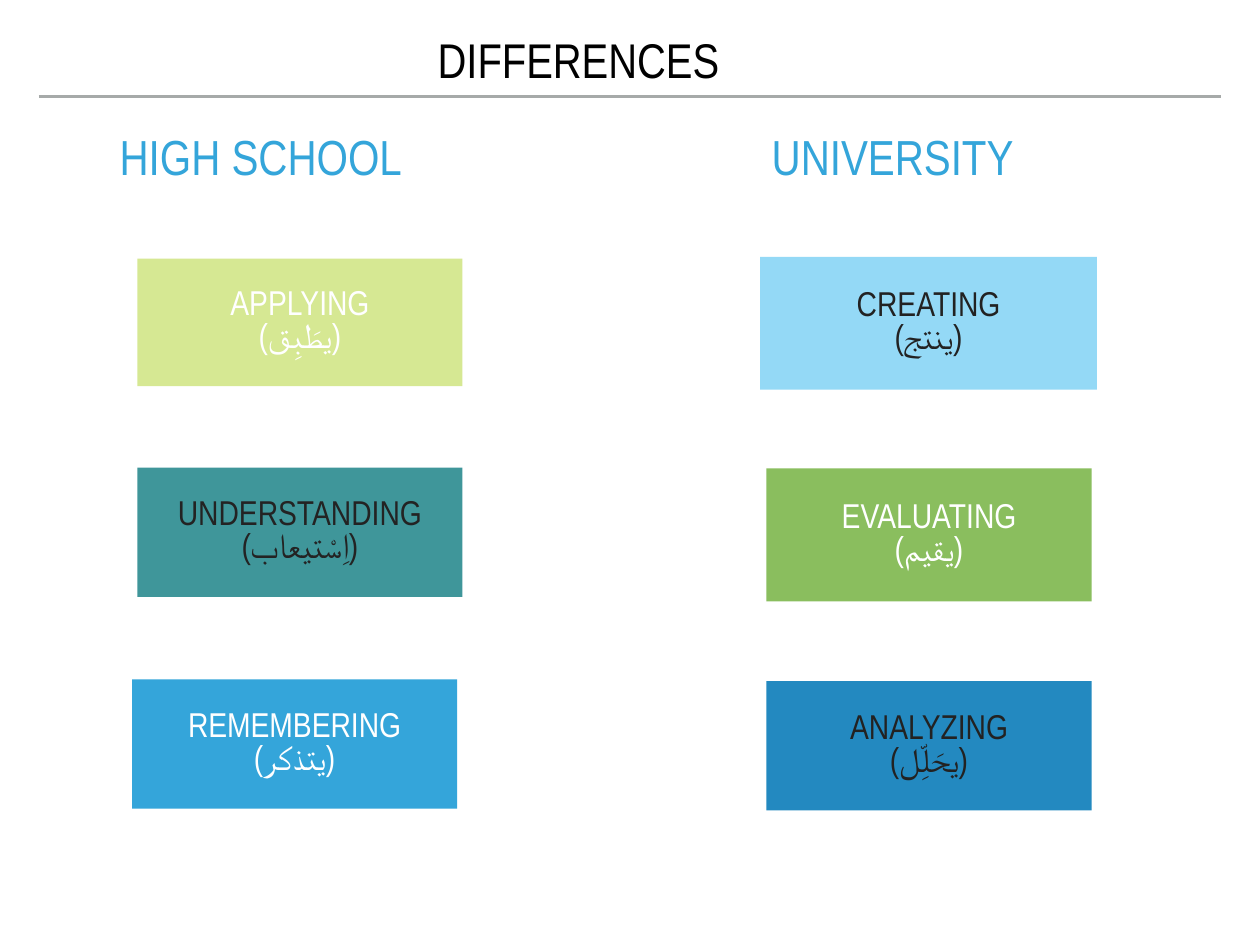
"""Build the slide comparing high school and university thinking skills."""
from dataclasses import dataclass

from lxml import etree
from pptx import Presentation
from pptx.dml.color import RGBColor
from pptx.enum.shapes import MSO_CONNECTOR, MSO_SHAPE
from pptx.enum.text import MSO_ANCHOR, PP_ALIGN
from pptx.oxml.ns import qn
from pptx.util import Pt

PX = 9144
FONT = "Arial Narrow"
INSET = 6
STRAIGHT = MSO_CONNECTOR.STRAIGHT
RECTANGLE = MSO_SHAPE.RECTANGLE
TOP, MIDDLE = MSO_ANCHOR.TOP, MSO_ANCHOR.MIDDLE
LEFT, CENTER = PP_ALIGN.LEFT, PP_ALIGN.CENTER


@dataclass(frozen=True)
class Box:
    left: int
    top: int
    width: int
    height: int


@dataclass(frozen=True)
class Heading:
    box: Box
    text: str
    color: str
    size: float = 40
    spacing: float = 0.8


@dataclass(frozen=True)
class Skill:
    box: Box
    english: str
    arabic: str
    fill: str
    color: str


HEADINGS = [
    Heading(Box(865, 149, 373, 116), "UNIVERSITY", "34A5DA"),
    Heading(Box(129, 149, 413, 116), "HIGH SCHOOL", "34A5DA"),
    Heading(Box(488, 51, 446, 99), "DIFFERENCES", "000000", 39.6, 0.6),
]
SKILLS = [
    Skill(Box(149, 767, 367, 146), "REMEMBERING", "(يتذكر)", "34A5DA", "FFFFFF"),
    Skill(Box(155, 528, 367, 146), "UNDERSTANDING", "(اِسْتيعاب)", "3F969A", "232323"),
    Skill(Box(155, 292, 367, 144), "APPLYING", "(يطَبِق)", "D6E893", "FFFFFF"),
    Skill(Box(865, 769, 367, 146), "ANALYZING", "(يحَلِّل)", "2389C0", "222222"),
    Skill(Box(865, 529, 367, 150), "EVALUATING", "(يقيم)", "8ABE5E", "FFFFFF"),
    Skill(Box(858, 290, 380, 150), "CREATING", "(ينتج)", "94D9F6", "222222"),
]


def rgb(color: str) -> RGBColor:
    """Turn a hex string into a colour."""
    return RGBColor.from_string(color)


def emu(box: Box) -> list[int]:
    """Scale a box from px to EMU."""
    return [v * PX for v in (box.left, box.top, box.width, box.height)]


def write(sp, lines: list[str], size: float, color: str, spacing: float,
          align=LEFT, anchor=TOP) -> None:
    """Fill a shape with evenly formatted paragraphs."""
    tf = sp.text_frame
    frame = {"word_wrap": True, "vertical_anchor": anchor}
    frame |= {f"margin_{side}": INSET * PX for side in ("left", "top", "right", "bottom")}
    for name, value in frame.items():
        setattr(tf, name, value)
    for i, line in enumerate(lines):
        p = tf.paragraphs[0] if i == 0 else tf.add_paragraph()
        p.alignment, p.line_spacing = align, spacing
        r = p.add_run()
        r.text = line
        for name, value in {"name": FONT, "size": Pt(size)}.items():
            setattr(r.font, name, value)
        r.font.color.rgb = rgb(color)


def add_rule(s, left: int, right: int, y: int) -> None:
    """Draw the grey line below the title."""
    sp = s.shapes.add_connector(STRAIGHT, left * PX, y * PX, right * PX, y * PX)
    sp.line.color.rgb = rgb("A6AAA9")
    sp.line.width = Pt(2)
    etree.SubElement(sp._element.spPr, qn("a:effectLst"))


def add_heading(s, heading: Heading) -> None:
    """Draw one heading."""
    sp = s.shapes.add_textbox(*emu(heading.box))
    write(sp, [heading.text], heading.size, heading.color, heading.spacing)


def add_skill(s, skill: Skill) -> None:
    """Draw one filled skill box with its translation."""
    sp = s.shapes.add_shape(RECTANGLE, *emu(skill.box))
    sp.shadow.inherit = False
    sp.fill.solid()
    sp.fill.fore_color.rgb = rgb(skill.fill)
    sp.line.fill.background()
    write(sp, [skill.english, skill.arabic], 28, skill.color, 0.8, CENTER, MIDDLE)


def main() -> None:
    """Build and save the slide."""
    prs = Presentation()
    prs.slide_width, prs.slide_height = 1422 * PX, 1067 * PX
    s = prs.slides.add_slide(prs.slide_layouts[6])
    add_rule(s, 44, 1378, 109)
    for heading in HEADINGS:
        add_heading(s, heading)
    for skill in SKILLS:
        add_skill(s, skill)
    prs.save("out.pptx")


if __name__ == "__main__":
    main()
